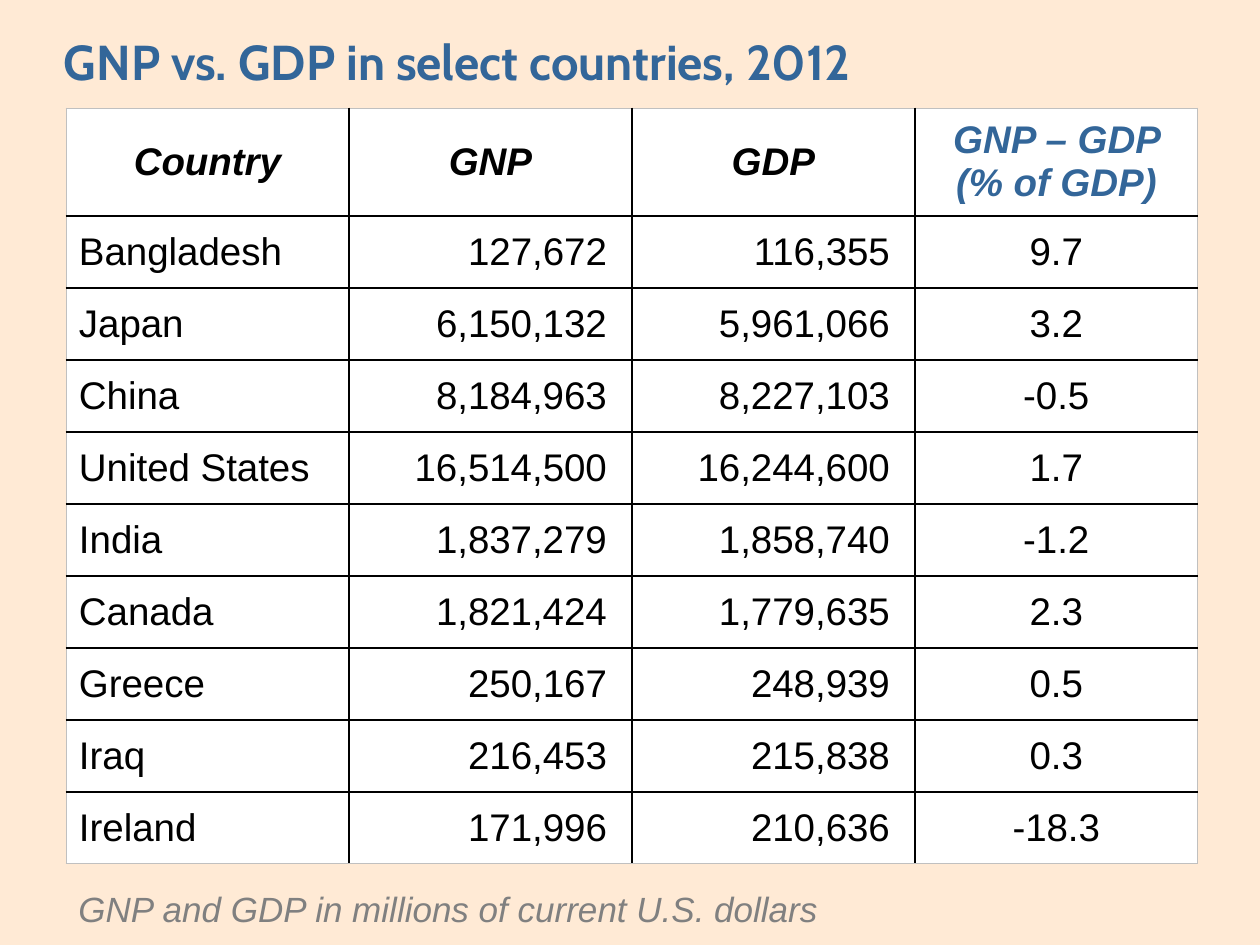
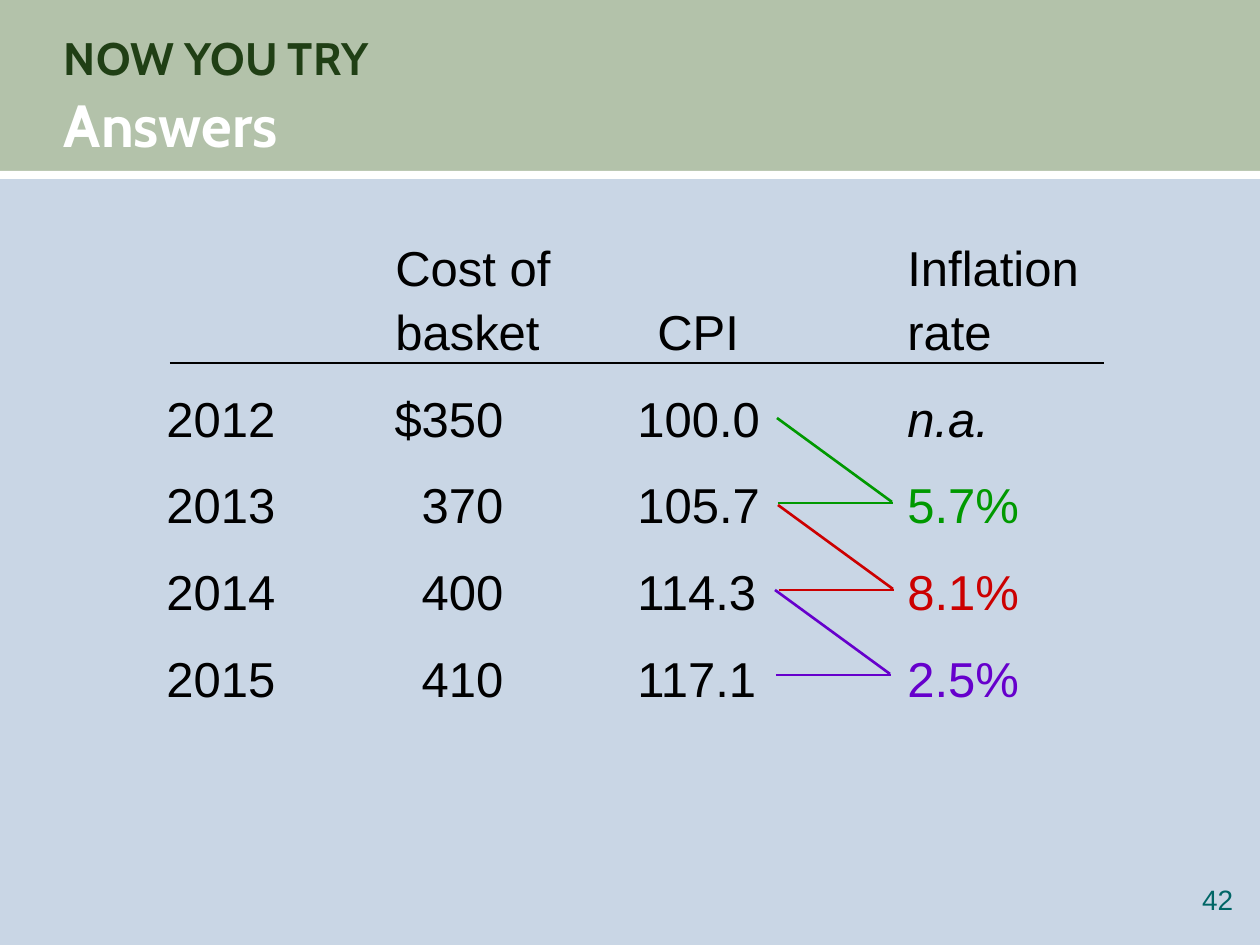
from lxml.etree import SubElement
from pptx import Presentation
from pptx.dml.color import RGBColor
from pptx.enum.shapes import MSO_CONNECTOR, MSO_SHAPE
from pptx.enum.text import MSO_ANCHOR, PP_ALIGN
from pptx.oxml.ns import qn
from pptx.util import Emu, Pt

EMU_PER_PX = 914400 / 126
COLORS = {
    "cream": "FFEAD5", "sky": "C9D6E5", "sage": "B3C2AA", "forest": "203F15",
    "blue": "336699", "teal": "006666", "white": "FFFFFF", "black": "000000",
    "gray": "808080", "silver": "C0C0C0", "green": "009900", "red": "CC0000",
    "purple": "6600CC",
}
TITLE_FORMAT = {"name": "Cabin", "bold": True}
BODY_FORMAT = {"name": "Arial", "size": Pt(28)}
CELL_FORMAT = {"name": "Arial", "size": Pt(22)}
NO_MARGINS = {"margin_left": 0, "margin_top": 0, "margin_right": 0, "margin_bottom": 0}

COUNTRY_HEADINGS = ("Country", "GNP", "GDP", "GNP – GDP (% of GDP)")
COUNTRY_ROWS = (
    ("Bangladesh", "127,672", "116,355", "9.7"),
    ("Japan", "6,150,132", "5,961,066", "3.2"),
    ("China", "8,184,963", "8,227,103", "-0.5"),
    ("United States", "16,514,500", "16,244,600", "1.7"),
    ("India", "1,837,279", "1,858,740", "-1.2"),
    ("Canada", "1,821,424", "1,779,635", "2.3"),
    ("Greece", "250,167", "248,939", "0.5"),
    ("Iraq", "216,453", "215,838", "0.3"),
    ("Ireland", "171,996", "210,636", "-18.3"),
)
COLUMN_ALIGNMENTS = (PP_ALIGN.LEFT, PP_ALIGN.RIGHT, PP_ALIGN.RIGHT, PP_ALIGN.CENTER)

HEADING_TABS = ((229, "l"), (491, "l"), (741, "l"))
VALUE_TABS = ((337, "r"), (471, "l"), (741, "l"))
CPI_HEADINGS = ("\tCost of\t\tInflation", "\tbasket\tCPI\trate")
CPI_ROWS = (
    ("2012", "$350", "100.0", "n.a.", "black"),
    ("2013", "370", "105.7", "5.7%", "green"),
    ("2014", "400", "114.3", "8.1%", "red"),
    ("2015", "410", "117.1", "2.5%", "purple"),
)
ZIGZAGS = (("green", 778, 503), ("red", 779, 590), ("purple", 776, 675))


def px(length):
    """Turn whole pixels into EMU."""
    return Emu(round(length * EMU_PER_PX))


def color(name):
    """Look up a named colour."""
    return RGBColor.from_string(COLORS[name])


def apply(target, values):
    """Set each attribute of the target from a dict."""
    for name, value in values.items():
        setattr(target, name, value)


def add_run(paragraph, text, color_name, *formats):
    """Append formatted text to a paragraph."""
    run = paragraph.add_run()
    run.text = text
    for values in formats:
        apply(run.font, values)
    run.font.color.rgb = color(color_name)


def add_slide(presentation, background):
    """Add a blank slide with a plain background."""
    slide = presentation.slides.add_slide(presentation.slide_layouts[6])
    slide.background.fill.solid()
    slide.background.fill.fore_color.rgb = color(background)
    return slide


def add_text_box(slide, left, top, width, height, **frame_values):
    """Add a wrapping text box and return its text frame."""
    frame = slide.shapes.add_textbox(px(left), px(top), px(width), px(height)).text_frame
    apply(frame, {"word_wrap": True, **frame_values})
    return frame


def add_title(slide, top, height, lines):
    """Add a title made of (text, colour, point size) lines."""
    frame = add_text_box(slide, 64, top, 1136, height,
                         vertical_anchor=MSO_ANCHOR.MIDDLE, **NO_MARGINS)
    paragraph = frame.paragraphs[0]
    paragraph.line_spacing = 1.05
    for index, (text, color_name, size) in enumerate(lines):
        if index:
            paragraph.add_line_break()
        add_run(paragraph, text, color_name, TITLE_FORMAT, {"size": Pt(size)})


def add_band(slide, top, height, color_name):
    """Add a full-width band."""
    band = slide.shapes.add_shape(MSO_SHAPE.RECTANGLE, 0, px(top), px(1260), px(height))
    band.shadow.inherit = False
    band.fill.solid()
    band.fill.fore_color.rgb = color(color_name)
    band.line.fill.background()


def add_line(slide, start, end, color_name, width):
    """Add a straight line without a shadow."""
    line = slide.shapes.add_connector(
        MSO_CONNECTOR.STRAIGHT, *(px(value) for value in (*start, *end)))
    line.line.color.rgb = color(color_name)
    line.line.width = Pt(width)
    SubElement(line.element.spPr, qn("a:effectLst"))


def set_borders(cell, outer_sides):
    """Draw black inner borders and silver outer ones."""
    properties = cell._tc.get_or_add_tcPr()
    for side in "LRTB":
        outer = side in outer_sides
        border = SubElement(properties, qn(f"a:ln{side}"), w=str(Pt(0.5 if outer else 1)))
        fill = SubElement(border, qn("a:solidFill"))
        SubElement(fill, qn("a:srgbClr"), val=COLORS["silver" if outer else "black"])


def fill_cell(cell, text, alignment, color_name, margins, outer_sides, **font_values):
    """Write and format one table cell."""
    set_borders(cell, outer_sides)
    cell.fill.solid()
    cell.fill.fore_color.rgb = color("white")
    left, top, right, bottom = (px(margin) for margin in margins)
    apply(cell, {"margin_left": left, "margin_top": top, "margin_right": right,
                 "margin_bottom": bottom, "vertical_anchor": MSO_ANCHOR.MIDDLE})
    paragraph = cell.text_frame.paragraphs[0]
    paragraph.alignment = alignment
    add_run(paragraph, text, color_name, CELL_FORMAT, font_values)


def add_country_table(slide):
    """Add the table of GNP and GDP by country."""
    rows = (COUNTRY_HEADINGS, *COUNTRY_ROWS)
    last_row, last_column = len(rows) - 1, len(COUNTRY_HEADINGS) - 1
    table = slide.shapes.add_table(
        len(rows), len(COUNTRY_HEADINGS), px(66), px(108), px(1132), px(756)).table
    apply(table, {"first_row": False, "horz_banding": False})
    for column in table.columns:
        column.width = px(283)
    for row_index, texts in enumerate(rows):
        heading = row_index == 0
        table.rows[row_index].height = px(108 if heading else 72)
        for column_index, text in enumerate(texts):
            alignment = PP_ALIGN.CENTER if heading else COLUMN_ALIGNMENTS[column_index]
            if heading or column_index == 0:
                margins = (13, 6, 13, 6)
            else:
                margins = (1, 1, 25 if alignment == PP_ALIGN.RIGHT else 1, 0)
            outer_sides = (
                "L" * (column_index == 0) + "R" * (column_index == last_column)
                + "T" * heading + "B" * (row_index == last_row))
            color_name = "blue" if heading and column_index == last_column else "black"
            fill_cell(table.cell(row_index, column_index), text, alignment, color_name,
                      margins, outer_sides, bold=heading, italic=heading)


def add_tabbed_paragraph(frame, tabs, space_before):
    """Start a paragraph with its own tab stops."""
    first = not frame.paragraphs[0].runs
    paragraph = frame.paragraphs[0] if first else frame.add_paragraph()
    apply(paragraph, {"line_spacing": 1.1, "space_before": Pt(space_before)})
    tab_list = SubElement(paragraph._p.get_or_add_pPr(), qn("a:tabLst"))
    for position, alignment in tabs:
        SubElement(tab_list, qn("a:tab"), pos=str(px(position)), algn=alignment)
    return paragraph


def add_cpi_answers(slide):
    """Add the tabbed price index figures."""
    frame = add_text_box(slide, 154, 225, 1041, 549)
    for heading in CPI_HEADINGS:
        add_run(add_tabbed_paragraph(frame, HEADING_TABS, 0), heading, "black", BODY_FORMAT)
    for year, cost, index, rate, rate_color in CPI_ROWS:
        paragraph = add_tabbed_paragraph(frame, VALUE_TABS, 12.5)
        add_run(paragraph, f"{year}\t{cost}\t{index}\t", "black", BODY_FORMAT)
        add_run(paragraph, rate, rate_color, BODY_FORMAT, {"italic": rate == "n.a."})


def add_zigzag(slide, color_name, left, bottom):
    """Link two successive index values to their inflation rate."""
    add_line(slide, (left, bottom), (left + 115, bottom), color_name, 1.5)
    add_line(slide, (left + 114, bottom - 1), (left - 1, bottom - 85), color_name, 1.5)


def build_country_slide(presentation):
    """Build the slide comparing GNP with GDP."""
    slide = add_slide(presentation, "cream")
    add_title(slide, 21, 77, [("GNP vs. GDP in select countries, 2012", "blue", 28)])
    add_country_table(slide)
    note = add_text_box(slide, 66, 881, 1034, 55)
    add_run(note.paragraphs[0], "GNP and GDP in millions of current U.S. dollars", "gray",
            BODY_FORMAT, {"size": Pt(20), "italic": True})


def build_answers_slide(presentation):
    """Build the slide with the inflation answers."""
    slide = add_slide(presentation, "sky")
    add_band(slide, 0, 176, "sage")
    add_title(slide, 28, 130, [("NOW YOU TRY", "forest", 26), ("Answers", "white", 34)])
    add_band(slide, 171, 8, "white")
    number = add_text_box(slide, 1164, 883, 69, 40, **NO_MARGINS).paragraphs[0]
    number.alignment = PP_ALIGN.RIGHT
    add_run(number, "42", "teal", BODY_FORMAT, {"size": Pt(16)})
    add_cpi_answers(slide)
    for zigzag in ZIGZAGS:
        add_zigzag(slide, *zigzag)
    add_line(slide, (170, 363), (1104, 363), "black", 0.75)


def main():
    """Build and save the presentation."""
    presentation = Presentation()
    apply(presentation, {"slide_width": px(1260), "slide_height": px(945)})
    build_country_slide(presentation)
    build_answers_slide(presentation)
    presentation.save("out.pptx")


if __name__ == "__main__":
    main()
